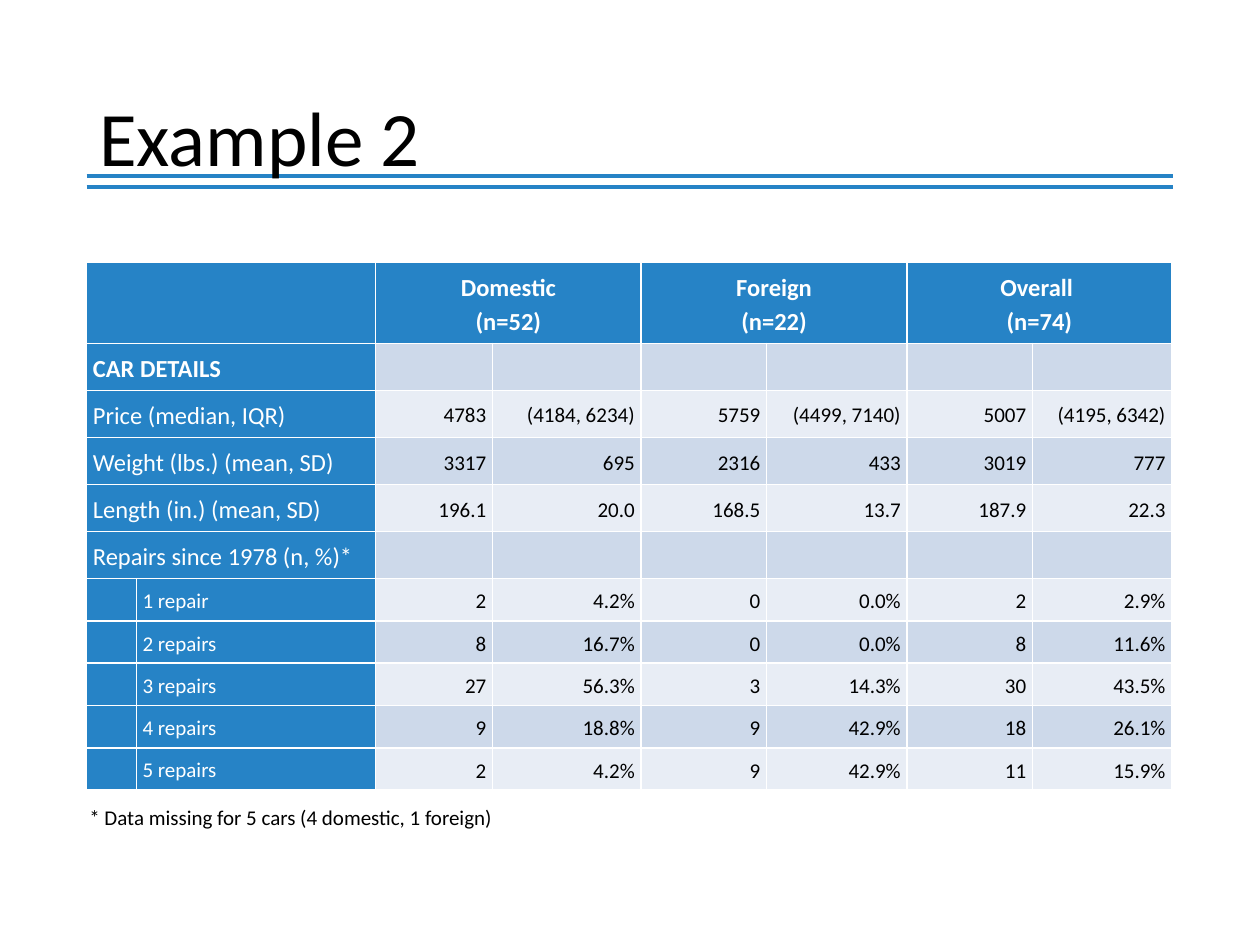
import dataclasses

import lxml.etree
import pptx
import pptx.dml.color
import pptx.enum.shapes
import pptx.enum.text
import pptx.oxml.ns
import pptx.util

Pt = pptx.util.Pt
ALIGN = pptx.enum.text.PP_ALIGN
ANCHOR = pptx.enum.text.MSO_ANCHOR


@dataclasses.dataclass(frozen=True)
class Theme:
    font: str = "Calibri"
    accent: str = "2683C6"
    dark_band: str = "CDD9EA"
    light_band: str = "E8EDF5"
    text: str = "000000"
    inverse: str = "FFFFFF"
    title_size: float = 44
    label_size: float = 14
    value_size: float = 12
    rule_width: float = 2.25


THEME = Theme()

COLUMN_WIDTHS = [28.4, 136.8, 66.8, 84.9, 71.7, 80.3, 71.7, 79.6]
HEADER_HEIGHT, SECTION_HEIGHT, REPAIR_HEIGHT = 46.4, 26.9, 24.2
CELL_MARGIN = 3.6

GROUPS = [("Domestic", "(n=52)"), ("Foreign", "(n=22)"), ("Overall ", "(n=74)")]
SECTIONS = [
    ("CAR DETAILS", [""] * 6),
    ("Price (median, IQR)", ["4783", "(4184, 6234)", "5759", "(4499, 7140)", "5007", "(4195, 6342)"]),
    ("Weight (lbs.) (mean, SD)", ["3317", "695", "2316", "433", "3019", "777"]),
    ("Length (in.) (mean, SD)", ["196.1", "20.0", "168.5", "13.7", "187.9", "22.3"]),
    ("Repairs since 1978 (n, %)*", [""] * 6),
]
REPAIRS = [
    ("1 repair", ["2", "4.2%", "0", "0.0%", "2", "2.9%"]),
    ("2 repairs", ["8", "16.7%", "0", "0.0%", "8", "11.6%"]),
    ("3 repairs", ["27", "56.3%", "3", "14.3%", "30", "43.5%"]),
    ("4 repairs", ["9", "18.8%", "9", "42.9%", "18", "26.1%"]),
    ("5 repairs", ["2", "4.2%", "9", "42.9%", "11", "15.9%"]),
]


def rgb(color):
    return pptx.dml.color.RGBColor.from_string(color)


def add_run(paragraph, text, size, color=THEME.text, bold=False):
    run = paragraph.add_run()
    run.text = text
    run.font.name = THEME.font
    run.font.size = Pt(size)
    run.font.bold = bold
    run.font.color.rgb = rgb(color)


def fill_cell(cell, lines, fill, size, color=THEME.text, bold=False,
              align=ALIGN.LEFT, anchor=ANCHOR.MIDDLE):
    cell.fill.solid()
    cell.fill.fore_color.rgb = rgb(fill)
    cell.vertical_anchor = anchor
    cell.margin_left = cell.margin_right = Pt(CELL_MARGIN)
    cell.margin_top = cell.margin_bottom = Pt(CELL_MARGIN)
    frame = cell.text_frame
    for index, line in enumerate(lines):
        paragraph = frame.add_paragraph() if index else frame.paragraphs[0]
        paragraph.alignment = align
        paragraph.line_spacing = 1.15
        add_run(paragraph, line, size, color, bold)
    if not lines:
        ending = lxml.etree.SubElement(frame.paragraphs[0]._p, pptx.oxml.ns.qn("a:endParaRPr"))
        ending.set("sz", str(int(size * 100)))


def place_title(slide, left, top, width, height):
    for offset in (72, 78):
        rule = slide.shapes.add_connector(
            pptx.enum.shapes.MSO_CONNECTOR.STRAIGHT,
            Pt(left), Pt(top + offset), Pt(left + width), Pt(top + offset))
        rule.line.color.rgb = rgb(THEME.accent)
        rule.line.width = Pt(THEME.rule_width)
        lxml.etree.SubElement(rule.element.spPr, pptx.oxml.ns.qn("a:effectLst"))
    title = slide.shapes.title
    title.left, title.top, title.width, title.height = Pt(left), Pt(top), Pt(width), Pt(height)
    frame = title.text_frame
    frame.auto_size = pptx.enum.text.MSO_AUTO_SIZE.NONE
    frame.vertical_anchor = ANCHOR.MIDDLE
    paragraph = frame.paragraphs[0]
    paragraph.alignment = ALIGN.LEFT
    paragraph.line_spacing = 0.9
    add_run(paragraph, "Example 2", THEME.title_size)
    title.element.getparent().append(title.element)


def place_table(slide, left, top):
    heights = [HEADER_HEIGHT] + [SECTION_HEIGHT] * len(SECTIONS) + [REPAIR_HEIGHT] * len(REPAIRS)
    table = slide.shapes.add_table(
        len(heights), len(COLUMN_WIDTHS), Pt(left), Pt(top),
        Pt(sum(COLUMN_WIDTHS)), Pt(sum(heights))).table
    for column, width in zip(table.columns, COLUMN_WIDTHS):
        column.width = Pt(width)
    for row, height in zip(table.rows, heights):
        row.height = Pt(height)

    for index, lines in enumerate([()] + GROUPS):
        column = 2 * index
        fill_cell(table.cell(0, column), lines, THEME.accent, THEME.label_size,
                  THEME.inverse, True, ALIGN.CENTER, ANCHOR.BOTTOM)
        fill_cell(table.cell(0, column + 1), (), THEME.accent, THEME.label_size)
        table.cell(0, column).merge(table.cell(0, column + 1))

    for row, (label, values) in enumerate(SECTIONS + REPAIRS, start=1):
        is_section = row <= len(SECTIONS)
        label_column, blank_column = (0, 1) if is_section else (1, 0)
        size = THEME.label_size if is_section else THEME.value_size
        fill_cell(table.cell(row, label_column), [label], THEME.accent, size,
                  THEME.inverse, bold=row == 1)
        fill_cell(table.cell(row, blank_column), (), THEME.accent, THEME.value_size)
        if is_section:
            table.cell(row, 0).merge(table.cell(row, 1))
        band = THEME.dark_band if row % 2 else THEME.light_band
        anchor = ANCHOR.MIDDLE if is_section else ANCHOR.BOTTOM
        for column, value in enumerate(values, start=2):
            fill_cell(table.cell(row, column), [value] if value else (), band,
                      THEME.value_size, align=ALIGN.RIGHT, anchor=anchor)


def place_footnote(slide, left, top, width, height):
    box = slide.shapes.add_textbox(Pt(left), Pt(top), Pt(width), Pt(height))
    box.text_frame.word_wrap = False
    box.text_frame.auto_size = pptx.enum.text.MSO_AUTO_SIZE.SHAPE_TO_FIT_TEXT
    add_run(box.text_frame.paragraphs[0],
            "* Data missing for 5 cars (4 domestic, 1 foreign)", THEME.value_size)


def main():
    presentation = pptx.Presentation()
    presentation.slide_width, presentation.slide_height = Pt(720), Pt(540)
    slide = presentation.slides.add_slide(presentation.slide_layouts.get_by_name("Title Only"))
    place_title(slide, 49.5, 28.75, 621, 104.4)
    place_table(slide, 49.5, 149.8)
    place_footnote(slide, 44, 456, 247.7, 21.6)
    presentation.save("out.pptx")


if __name__ == "__main__":
    main()
